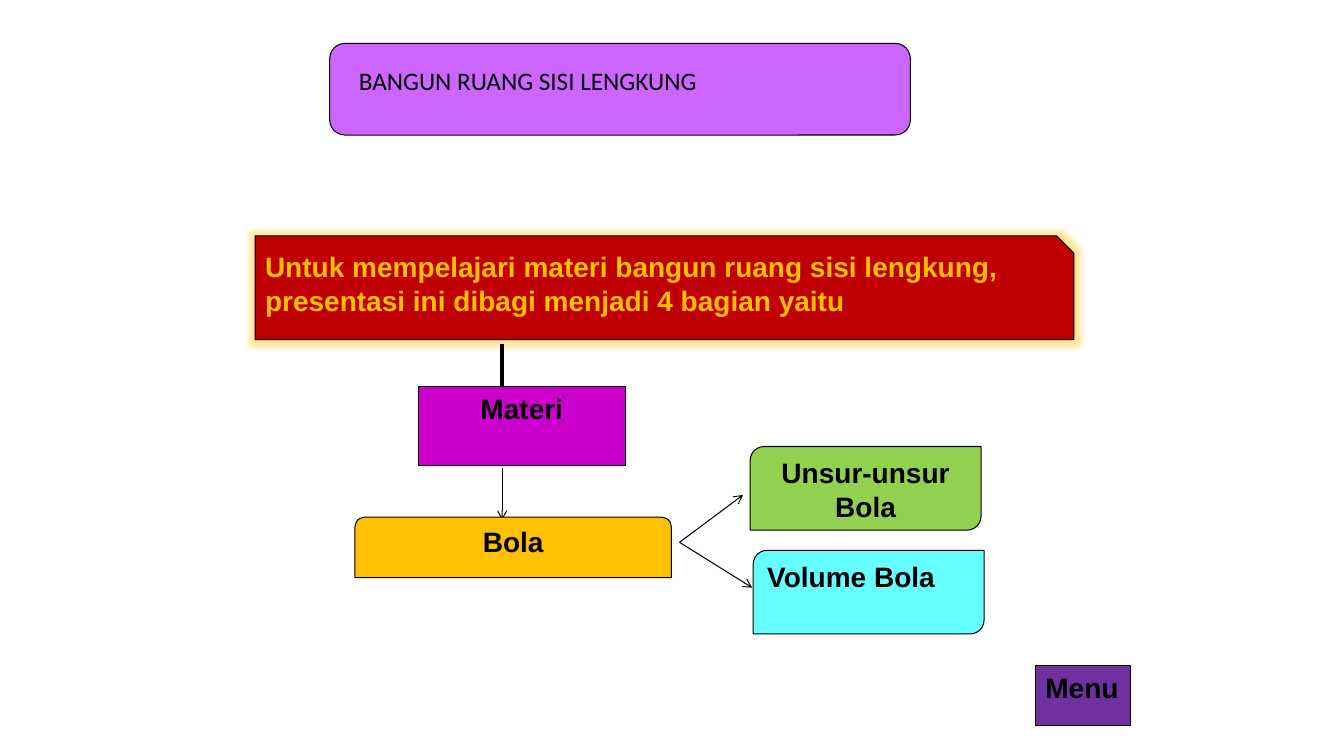
from lxml import etree
from pptx import Presentation
from pptx.dml.color import RGBColor
from pptx.enum.shapes import MSO_CONNECTOR, MSO_SHAPE
from pptx.enum.text import MSO_ANCHOR, MSO_AUTO_SIZE, PP_ALIGN
from pptx.oxml.ns import qn
from pptx.util import Emu, Pt

EMU_PER_PX = 9144
TITLE_ONLY = 5
STRAIGHT = MSO_CONNECTOR.STRAIGHT
RECTANGLE = MSO_SHAPE.RECTANGLE
ROUNDED = MSO_SHAPE.ROUNDED_RECTANGLE
SNIPPED = MSO_SHAPE.SNIP_1_RECTANGLE
ROUND_TOP = MSO_SHAPE.ROUND_2_SAME_RECTANGLE
ROUND_DIAGONAL = MSO_SHAPE.ROUND_2_DIAG_RECTANGLE
LEFT, CENTER = PP_ALIGN.LEFT, PP_ALIGN.CENTER
TOP = MSO_ANCHOR.TOP
NO_AUTOFIT = MSO_AUTO_SIZE.NONE
BLACK, GOLD = "000000", "FFC000"


def px(length):
    """Turn a length in px into EMU."""
    return Emu(length * EMU_PER_PX)


def color(value):
    """Turn a hex string into a colour."""
    return RGBColor.from_string(value)


def set_text(shape, text, size, font_name, text_color, bold, align):
    """Write one formatted paragraph at the top of a shape."""
    frame = shape.text_frame
    frame.text = text
    frame.word_wrap = True
    frame.auto_size = NO_AUTOFIT
    frame.vertical_anchor = TOP
    paragraph = frame.paragraphs[0]
    paragraph.alignment = align
    font = paragraph.runs[0].font
    font.size, font.name, font.bold = Pt(size), font_name, bold
    font.color.rgb = color(text_color)


def add_box(slide, kind, bounds, fill, text="", align=CENTER, text_color=BLACK):
    """Add a filled, outlined shape with an optional bold label."""
    shape = slide.shapes.add_shape(kind, *map(px, bounds))
    shape.shadow.inherit = False
    shape.fill.solid()
    shape.fill.fore_color.rgb = color(fill)
    shape.line.color.rgb = color(BLACK)
    shape.line.width = Pt(0.75)
    if text:
        set_text(shape, text, 20, "Arial", text_color, True, align)
    return shape


def add_glow(shape, glow_color, radius):
    """Surround a shape with a translucent glow."""
    effects = shape._element.spPr.find(qn("a:effectLst"))
    glow = etree.SubElement(effects, qn("a:glow"), rad=str(px(radius)))
    tint = etree.SubElement(glow, qn("a:srgbClr"), val=glow_color)
    etree.SubElement(tint, qn("a:alpha"), val="40000")


def add_line(slide, start, end, width=0.75, arrow=True):
    """Add a straight black line, with an arrowhead at its end if wanted."""
    connector = slide.shapes.add_connector(STRAIGHT, *map(px, start + end))
    connector.line.color.rgb = color(BLACK)
    connector.line.width = Pt(width)
    if arrow:
        outline = connector.line._get_or_add_ln()
        etree.SubElement(outline, qn("a:tailEnd"), type="arrow")
    etree.SubElement(connector._element.spPr, qn("a:effectLst"))


def add_title(slide, bounds, text):
    """Place the title placeholder in front of its banner."""
    title = slide.shapes.title
    title.left, title.top, title.width, title.height = map(px, bounds)
    set_text(title, text, 18, "Calibri", BLACK, False, LEFT)
    slide.shapes._spTree.append(title._element)


def main():
    """Build the slide and save it."""
    presentation = Presentation()
    presentation.slide_width, presentation.slide_height = px(1333), px(750)
    slide = presentation.slides.add_slide(presentation.slide_layouts[TITLE_ONLY])

    add_box(slide, ROUNDED, (327, 43, 576, 91), "CC66FF")
    add_title(slide, (346, 60, 529, 40), "BANGUN RUANG SISI LENGKUNG")
    intro = add_box(
        slide, SNIPPED, (253, 234, 812, 103), "C00000",
        "Untuk mempelajari materi bangun ruang sisi lengkung, "
        "presentasi ini dibagi menjadi 4 bagian yaitu", LEFT, GOLD)
    add_glow(intro, GOLD, 11)

    add_box(slide, RECTANGLE, (415, 383, 205, 79), "CC00CC", "Materi")
    add_line(slide, (498, 341), (498, 383), width=3, arrow=False)
    add_line(slide, (498, 464), (498, 516))
    add_box(slide, ROUND_TOP, (352, 513, 314, 60), GOLD, "Bola")

    fork = (674, 538)
    add_line(slide, fork, (737, 491))
    add_box(slide, ROUND_DIAGONAL, (744, 443, 229, 83), "92D050", "Unsur-unsur Bola")
    add_line(slide, fork, (746, 583))
    add_box(slide, ROUND_DIAGONAL, (747, 546, 229, 83), "66FFFF", "Volume Bola", LEFT)
    add_box(slide, RECTANGLE, (1027, 660, 94, 60), "7030A0", "Menu", LEFT)

    presentation.save("out.pptx")


if __name__ == "__main__":
    main()
